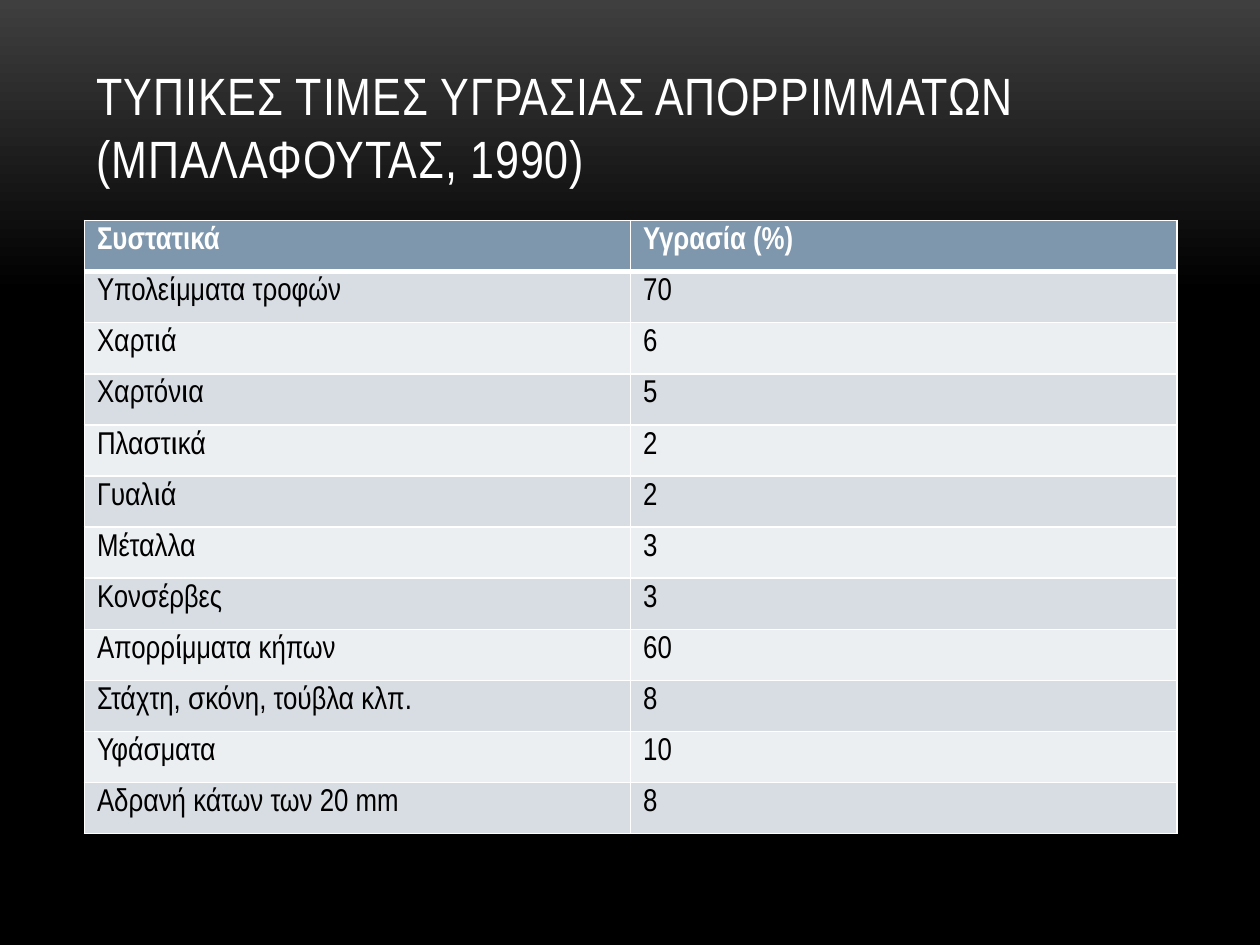
import copy
from dataclasses import dataclass

import lxml.etree
import pptx
import pptx.dml.color
import pptx.enum.text
import pptx.oxml.ns
import pptx.util

Inches = pptx.util.Inches
Pt = pptx.util.Pt
qn = pptx.oxml.ns.qn


@dataclass(frozen=True)
class Theme:
    font: str = "Arial Narrow"
    title_size: int = 30
    table_size: int = 18
    white: str = "FFFFFF"
    black: str = "000000"
    glow: str = "3F3F3F"
    header: str = "7E97AD"
    bands: tuple[str, str] = ("D8DDE3", "ECEFF1")
    thin: int = 1
    thick: int = 3


@dataclass(frozen=True)
class Moisture:
    component: str
    percent: int


THEME = Theme()
LEFT, WIDTH = 0.67, 8.67
TABLE_TOP, TABLE_HEIGHT = 1.75, 4.87
TITLE = "ΤΥΠΙΚΕΣ ΤΙΜΕΣ ΥΓΡΑΣΙΑΣ ΑΠΟΡΡΙΜΜΑΤΩΝ (ΜΠΑΛΑΦΟΥΤΑΣ, 1990)"
HEADINGS = ("Συστατικά", "Υγρασία (%)")
MOISTURES = [
    Moisture("Υπολείμματα τροφών", 70),
    Moisture("Χαρτιά", 6),
    Moisture("Χαρτόνια", 5),
    Moisture("Πλαστικά", 2),
    Moisture("Γυαλιά", 2),
    Moisture("Μέταλλα", 3),
    Moisture("Κονσέρβες", 3),
    Moisture("Απορρίμματα κήπων", 60),
    Moisture("Στάχτη, σκόνη, τούβλα κλπ.", 8),
    Moisture("Υφάσματα", 10),
    Moisture("Αδρανή κάτων των 20 mm", 8),
]


def rgb(value: str) -> pptx.dml.color.RGBColor:
    return pptx.dml.color.RGBColor.from_string(value)


def write(tf, text: str, *, size: int, color: str, bold: bool = False,
          spacing: float = 0) -> None:
    r = tf.paragraphs[0].add_run()
    r.text = text
    r.font.name = THEME.font
    r.font.size = Pt(size)
    r.font.bold = bold
    r.font.color.rgb = rgb(color)
    if spacing:
        r.font._element.set("spc", str(round(spacing * 100)))


def paint_background(s) -> None:
    fill = s.background.fill
    fill.gradient()
    fill.gradient_angle = 270
    stop_list = s.element.xpath(".//a:gsLst")[0]
    stop_list.append(copy.deepcopy(stop_list[-1]))
    stops = ((0, THEME.glow), (0.31, THEME.black), (1, THEME.black))
    for stop, (position, color) in zip(fill.gradient_stops, stops):
        stop.position = position
        stop.color.rgb = rgb(color)


def add_title(s) -> None:
    box = s.shapes.add_textbox(Inches(LEFT), Inches(0.3), Inches(WIDTH), Inches(1.25))
    tf = box.text_frame
    tf.word_wrap = True
    tf.vertical_anchor = pptx.enum.text.MSO_ANCHOR.BOTTOM
    write(tf, TITLE, size=THEME.title_size, color=THEME.white, spacing=0.5)


def set_borders(cell, top: int, bottom: int) -> None:
    tc_pr = cell._tc.get_or_add_tcPr()
    widths = {"a:lnL": THEME.thin, "a:lnR": THEME.thin, "a:lnT": top, "a:lnB": bottom}
    # Border lines come before the fill in the cell properties
    for i, (tag, width) in enumerate(widths.items()):
        ln = lxml.etree.Element(qn(tag), w=str(Pt(width)))
        solid = lxml.etree.SubElement(ln, qn("a:solidFill"))
        lxml.etree.SubElement(solid, qn("a:srgbClr"), val=THEME.white)
        tc_pr.insert(i, ln)


def add_moisture_table(s) -> None:
    rows = [HEADINGS] + [(m.component, str(m.percent)) for m in MOISTURES]
    table = s.shapes.add_table(len(rows), len(HEADINGS), Inches(LEFT), Inches(TABLE_TOP),
                               Inches(WIDTH), Inches(TABLE_HEIGHT)).table
    for i, values in enumerate(rows):
        header = i == 0
        for j, text in enumerate(values):
            cell = table.cell(i, j)
            cell.fill.solid()
            cell.fill.fore_color.rgb = rgb(THEME.header if header else THEME.bands[(i - 1) % 2])
            set_borders(cell, top=THEME.thick if i == 1 else THEME.thin,
                        bottom=THEME.thick if header else THEME.thin)
            write(cell.text_frame, text, size=THEME.table_size, bold=header,
                  color=THEME.white if header else THEME.black)


def main() -> None:
    prs = pptx.Presentation()
    prs.slide_width, prs.slide_height = Inches(10), Inches(7.5)
    s = prs.slides.add_slide(prs.slide_layouts[6])
    paint_background(s)
    add_title(s)
    add_moisture_table(s)
    prs.save("out.pptx")


if __name__ == "__main__":
    main()
